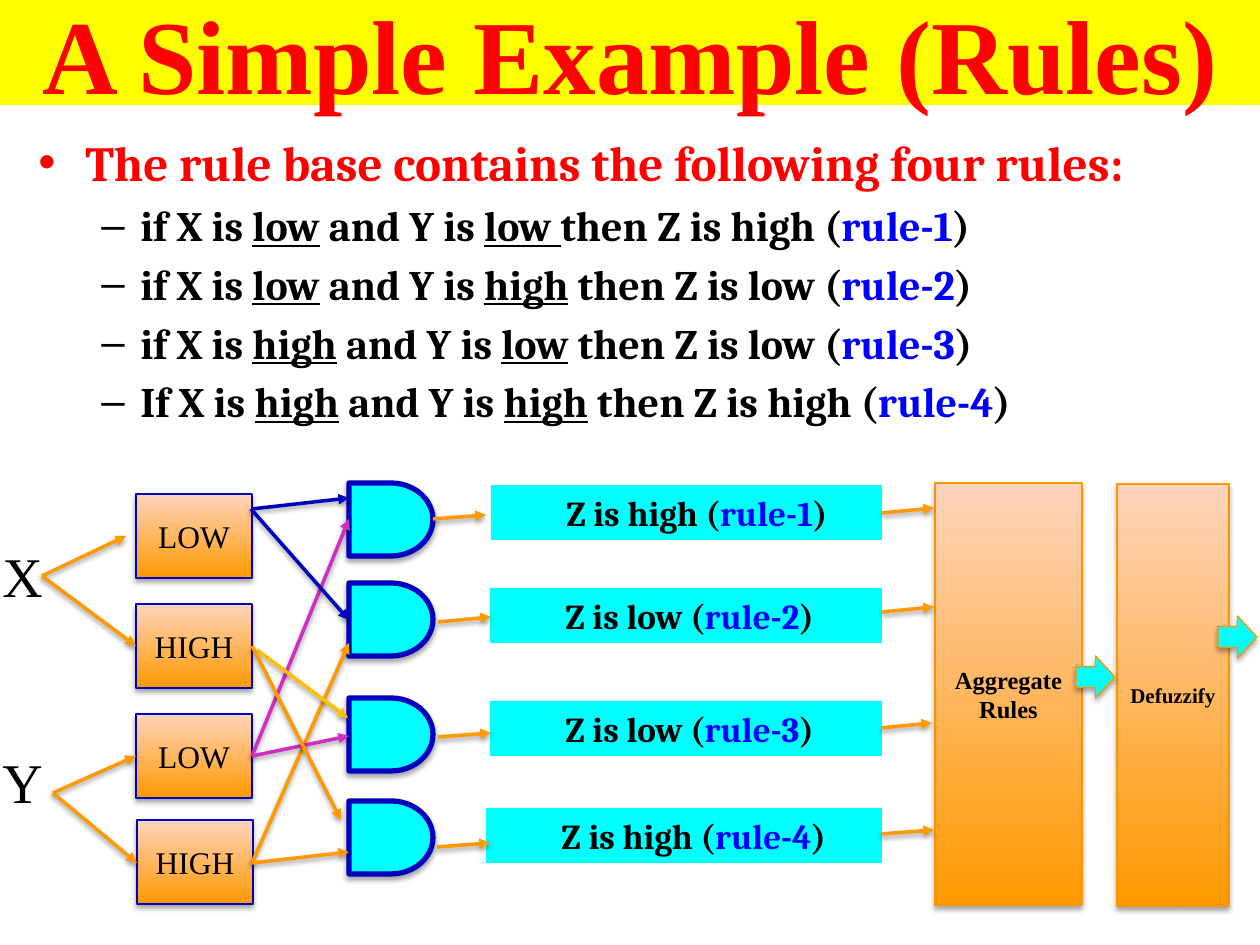
from lxml import etree
from pptx import Presentation
from pptx.dml.color import RGBColor
from pptx.enum.shapes import MSO_CONNECTOR as Conn, MSO_SHAPE as Kind
from pptx.enum.text import MSO_ANCHOR as Anchor, PP_ALIGN as Align
from pptx.oxml import parse_xml
from pptx.oxml.ns import nsdecls, qn
from pptx.util import Emu, Pt

SCALE = 914400 / 126
ROMAN, SERIF = "Times New Roman", "Cambria"
BLACK, RED, BLUE, NAVY = "000000", "FF0000", "0000FF", "0000BF"
AMBER, RUST, PEACH, GOLD = "FF9900", "F99600", "FFD4BD", "FFC000"
CYAN, PINK, YELLOW = "00FFFF", "D02EC1", "FFFF00"

RULES = [
    "if X is |_low| and Y is |_low |then Z is high (|#rule-1|)",
    "if X is |_low| and Y is |_high| then Z is low (|#rule-2|)",
    "if X is |_high| and Y is |_low| then Z is low (|#rule-3|)",
    "If X is |_high| and Y is |_high| then Z is high (|#rule-4|)",
]
SETS = [("LOW", 136, 494), ("HIGH", 136, 604), ("LOW", 136, 714), ("HIGH", 137, 820)]
GATES = [483, 583, 698, 801]
RESULTS = [("high", 491, 485), ("low", 490, 588), ("low", 490, 701), ("high", 486, 808)]
INPUTS = [(42, 576, 126, 536), (42, 576, 136, 646), (53, 793, 136, 756), (53, 793, 137, 863)]
LINKS = [
    (252, 509, 349, 498, NAVY), (252, 756, 349, 519, PINK),
    (251, 509, 349, 620, NAVY), (252, 863, 349, 643, AMBER),
    (257, 650, 348, 718, GOLD), (252, 756, 349, 736, PINK),
    (252, 646, 341, 820, AMBER), (252, 863, 349, 852, AMBER),
]
FIRED = [(433, 519, 486, 515), (438, 622, 491, 617), (438, 737, 491, 733), (437, 847, 490, 843)]
MERGED = [(882, 513, 934, 508), (882, 612, 934, 607), (881, 728, 932, 723), (881, 834, 934, 830)]


def px(*vals):
    return [Emu(round(v * SCALE)) for v in vals]


def rgb(code):
    return RGBColor.from_string(code)


def shade(props, alpha, dist):
    old = props.find(qn("a:effectLst"))
    if old is not None:
        props.remove(old)
    props.append(parse_xml(
        f'<a:effectLst {nsdecls("a")}><a:outerShdw blurRad="39370" dist="{Pt(dist)}" '
        f'dir="5400000" rotWithShape="0"><a:srgbClr val="{BLACK}">'
        f'<a:alpha val="{alpha}000"/></a:srgbClr></a:outerShdw></a:effectLst>'))


def write(frame, text, size=18, font=ROMAN, color=BLACK, bold=False,
          align=Align.LEFT, left=0, hang=0, bullet=None, gap=0, more=False):
    para = frame.add_paragraph() if more else frame.paragraphs[0]
    para.alignment = align
    para.space_before = Pt(gap)
    props = para._p.get_or_add_pPr()
    props.set("marL", str(px(left)[0]))
    props.set("indent", str(px(-hang)[0]))
    if bullet:
        etree.SubElement(props, qn("a:buFont")).set("typeface", "Arial")
        etree.SubElement(props, qn("a:buChar")).set("char", bullet)
    for part in text.split("|"):
        run = para.add_run()
        run.text = part.lstrip("_#")
        face = run.font
        face.name, face.size, face.bold = font, Pt(size), bold
        face.underline = part.startswith("_")
        face.color.rgb = rgb(BLUE if part.startswith("#") else color)


def label(slide, box):
    frame = slide.shapes.add_textbox(*px(*box)).text_frame
    frame.word_wrap = True
    return frame


def block(slide, box, fill=None, kind=Kind.RECTANGLE, line=None, width=0.75):
    shape = slide.shapes.add_shape(kind, *px(*box))
    shape.shadow.inherit = False
    if fill:
        shape.fill.solid()
        shape.fill.fore_color.rgb = rgb(fill)
    else:
        shape.fill.gradient()
        shape.fill.gradient_angle = 90
        for stop, tone in zip(shape.fill.gradient_stops, (AMBER, PEACH)):
            stop.color.rgb = rgb(tone)
    if line:
        shape.line.color.rgb = rgb(line)
        shape.line.width = Pt(width)
        shade(shape._element.spPr, 35, 1.8)
    else:
        shape.line.fill.background()
    frame = shape.text_frame
    frame.word_wrap = True
    frame.vertical_anchor = Anchor.MIDDLE
    return frame


def arrow(slide, x1, y1, x2, y2, color=AMBER):
    link = slide.shapes.add_connector(Conn.STRAIGHT, *px(x1, y1, x2, y2))
    link.line.color.rgb = rgb(color)
    link.line.width = Pt(2)
    props = link._element.spPr
    etree.SubElement(props.find(qn("a:ln")), qn("a:tailEnd")).set("type", "triangle")
    shade(props, 38, 1.6)


def main():
    deck = Presentation()
    deck.slide_width, deck.slide_height = px(1260, 945)
    slide = deck.slides.add_slide(deck.slide_layouts[6])

    write(block(slide, (0, 0, 1260, 105), YELLOW), "A Simple Example (Rules)",
          size=60, color=RED, bold=True, align=Align.CENTER)
    body = label(slide, (26, 126, 1207, 336))
    write(body, "The rule base contains the following four rules:", size=28, font=SERIF,
          color=RED, bold=True, align=Align.JUSTIFY, left=47, hang=47, bullet="•", gap=5.6)
    for rule in RULES:
        write(body, rule, size=24, font=SERIF, bold=True, align=Align.JUSTIFY,
              left=102, hang=39, bullet="–", gap=4.8, more=True)

    for name, top in (("X", 535), ("Y", 741)):
        write(label(slide, (-10, top, 105, 81)), name, size=32)
    for name, left, top in SETS:
        write(block(slide, (left, top, 116, 84), line=NAVY), name, align=Align.CENTER)
    for ends in INPUTS:
        arrow(slide, *ends)
    for top in GATES:
        block(slide, (349, top, 84, 73), CYAN, Kind.FLOWCHART_DELAY, NAVY, 3)
    for ends in LINKS:
        arrow(slide, *ends)
    for num, (level, left, top) in enumerate(RESULTS, 1):
        frame = block(slide, (left, top, 882 - left, 55), CYAN)
        frame.vertical_anchor = Anchor.TOP
        write(frame, f"Z is {level} (|#rule-{num}|)", size=20, font=SERIF, bold=True, left=63)
    for ends in FIRED:
        arrow(slide, *ends)

    write(block(slide, (935, 483, 147, 422), line=RUST), "Aggregate Rules",
          size=14, bold=True, align=Align.CENTER)
    for ends in MERGED:
        arrow(slide, *ends)
    write(block(slide, (1117, 484, 112, 422), line=RUST), "Defuzzify",
          size=12, bold=True, align=Align.CENTER)
    for left, top in ((1076, 656), (1218, 616)):
        block(slide, (left, top, 39, 42), CYAN, Kind.RIGHT_ARROW, RUST)

    deck.save("out.pptx")


if __name__ == "__main__":
    main()
